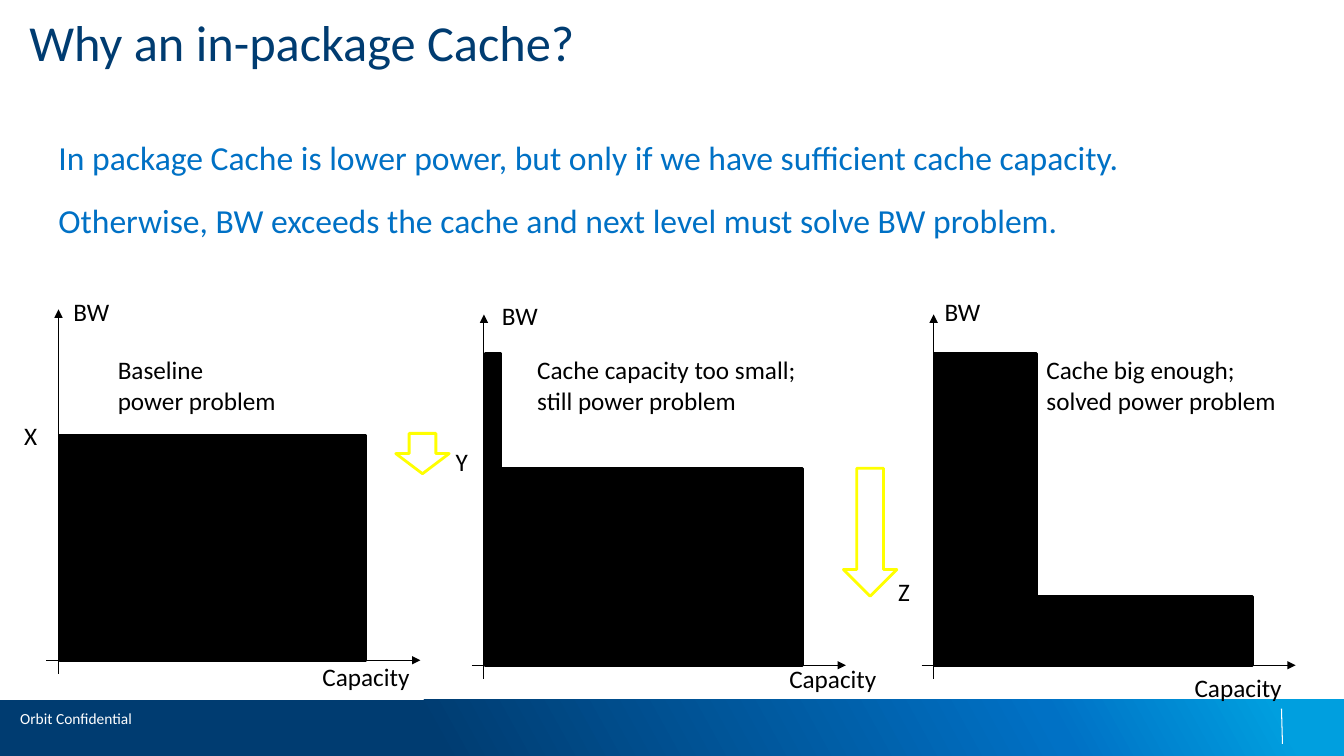
from dataclasses import dataclass

import lxml.etree
import pptx
import pptx.dml.color
import pptx.enum.shapes
import pptx.enum.text
import pptx.oxml
import pptx.oxml.ns
import pptx.util
from pptx.util import Inches

RGBColor = pptx.dml.color.RGBColor
Shape = pptx.enum.shapes.MSO_SHAPE

NAVY = RGBColor(0x00, 0x3C, 0x71)
BLUE = RGBColor(0x00, 0x71, 0xC5)
SKY = RGBColor(0x00, 0x9F, 0xDF)
BLACK = RGBColor(0x00, 0x00, 0x00)
WHITE = RGBColor(0xFF, 0xFF, 0xFF)
YELLOW = RGBColor(0xFF, 0xFF, 0x00)
FONT = "Calibri"
AXIS_HEIGHT, AXIS_WIDTH = 3.62, 3.71
AXIS_OVERHANG = 0.12  # part of the capacity axis left of the BW axis
ORIGIN_DROP = 3.48  # from the top of the BW axis to the origin
BAR_OFFSET = 0.01


@dataclass
class Bar:
    top: float
    width: float


@dataclass
class Label:
    text: str
    left: float
    top: float
    width: float
    height: float = 0.4
    wrap: bool = False


@dataclass
class Chart:
    left: float
    top: float
    bars: list[Bar]
    labels: list[Label]


@dataclass
class DropArrow:
    center_x: float
    center_y: float
    length: float
    thickness: float = 0.53


CHARTS = [
    Chart(0.58, 3.07, [Bar(4.32, 3.04)], [
        Label("BW", 0.63, 2.89, 0.56),
        Label("X", 0.14, 4.12, 0.56, wrap=True),
        Label("Capacity", 3.1, 6.51, 1.07),
        Label("Baseline\npower problem", 1.07, 3.47, 1.86, 0.71),
    ]),
    Chart(4.8, 3.12, [Bar(3.51, 0.16), Bar(4.65, 3.15)], [
        Label("BW", 4.88, 2.93, 0.56),
        Label("Y", 4.42, 4.38, 0.56, wrap=True),
        Label("Capacity", 7.73, 6.53, 1.07),
        Label("Cache capacity too small;\nstill power problem", 5.23, 3.47, 2.97, 0.71),
    ]),
    Chart(9.26, 3.12, [Bar(3.51, 1.01), Bar(5.92, 3.15)], [
        Label("BW", 9.27, 2.89, 0.56),
        Label("Z", 8.81, 5.67, 0.46, wrap=True),
        Label("Capacity", 11.75, 6.62, 1.07),
        Label("Cache big enough;\nsolved power problem", 10.28, 3.47, 2.61, 0.71),
    ]),
]
DROP_ARROWS = [DropArrow(4.19, 4.5, 0.4), DropArrow(8.63, 5.28, 1.27)]


def write_text(shape, text: str, *, size: float = 18, color: RGBColor = BLACK,
               wrap: bool = True, inset: bool = True, gap: float = 0) -> None:
    """Fill a shape with left-aligned paragraphs, one for each line of text."""
    frame = shape.text_frame
    frame.text = text
    frame.word_wrap = wrap
    frame.auto_size = pptx.enum.text.MSO_AUTO_SIZE.NONE
    frame.vertical_anchor = pptx.enum.text.MSO_ANCHOR.TOP
    if not inset:
        frame.margin_left = frame.margin_right = 0
        frame.margin_top = frame.margin_bottom = 0
    for index, paragraph in enumerate(frame.paragraphs):
        paragraph.alignment = pptx.enum.text.PP_ALIGN.LEFT
        paragraph.space_before = pptx.util.Pt(gap if index else 0)
        paragraph.font.size = pptx.util.Pt(size)
        paragraph.font.name = FONT
        paragraph.font.color.rgb = color


def add_text(slide, left: float, top: float, width: float, height: float,
             text: str, **text_format) -> None:
    box = slide.shapes.add_textbox(
        Inches(left), Inches(top), Inches(width), Inches(height))
    write_text(box, text, **text_format)


def add_line(slide, start: tuple[float, float], end: tuple[float, float],
             color: RGBColor = BLACK, arrow: str = "") -> None:
    """Draw a thin line; arrow is "headEnd" (start), "tailEnd" (end) or empty."""
    connector = slide.shapes.add_connector(
        pptx.enum.shapes.MSO_CONNECTOR.STRAIGHT,
        *(Inches(value) for value in (*start, *end)))
    connector.line.color.rgb = color
    connector.line.width = pptx.util.Pt(0.75)
    if arrow:
        line = connector.line._get_or_add_ln()
        lxml.etree.SubElement(line, pptx.oxml.ns.qn(f"a:{arrow}"), type="triangle")
    lxml.etree.SubElement(connector._element.spPr, pptx.oxml.ns.qn("a:effectLst"))


def add_block(slide, kind: Shape, left: float, top: float, width: float, height: float,
              fill: RGBColor | None = None, line: RGBColor | None = None):
    shape = slide.shapes.add_shape(
        kind, Inches(left), Inches(top), Inches(width), Inches(height))
    shape.shadow.inherit = False
    if fill is None:
        shape.fill.background()
    else:
        shape.fill.solid()
        shape.fill.fore_color.rgb = fill
    if line is None:
        shape.line.fill.background()
    else:
        shape.line.color.rgb = line
        shape.line.width = pptx.util.Pt(2)
    return shape


def add_footer(slide) -> None:
    band = add_block(slide, Shape.RECTANGLE, 0, 6.94, 13.33, 0.56, fill=NAVY)
    stops = "".join(
        f'<a:gs pos="{percent * 1000}"><a:srgbClr val="{color}"/></a:gs>'
        for percent, color in ((32, NAVY), (78, BLUE), (95, SKY)))
    gradient = pptx.oxml.parse_xml(
        f'<a:gradFill {pptx.oxml.ns.nsdecls("a")} rotWithShape="1"><a:gsLst>{stops}</a:gsLst>'
        f'<a:lin ang="{331 * 60000}" scaled="0"/></a:gradFill>')
    properties = band._element.spPr
    properties.replace(properties.find(pptx.oxml.ns.qn("a:solidFill")), gradient)
    add_line(slide, (12.71, 7.03), (12.72, 7.38), color=WHITE)
    add_text(slide, 0.2, 7.03, 1.75, 0.19, "Orbit Confidential",
             size=11, color=WHITE, inset=False)


def add_chart_sketch(slide, chart: Chart) -> None:
    origin = chart.top + ORIGIN_DROP
    axis_start = chart.left - AXIS_OVERHANG
    add_line(slide, (chart.left, chart.top), (chart.left, chart.top + AXIS_HEIGHT),
             arrow="headEnd")
    add_line(slide, (axis_start, origin), (axis_start + AXIS_WIDTH, origin),
             arrow="tailEnd")
    for bar in chart.bars:
        add_block(slide, Shape.RECTANGLE, chart.left + BAR_OFFSET, bar.top,
                  bar.width, origin - bar.top, fill=BLACK, line=BLACK)
    for label in chart.labels:
        add_text(slide, label.left, label.top, label.width, label.height,
                 label.text, wrap=label.wrap)


def add_drop_arrow(slide, arrow: DropArrow) -> None:
    shape = add_block(slide, Shape.RIGHT_ARROW, arrow.center_x - arrow.length / 2,
                      arrow.center_y - arrow.thickness / 2,
                      arrow.length, arrow.thickness, line=YELLOW)
    shape.rotation = 90


def main() -> None:
    presentation = pptx.Presentation()
    presentation.slide_width = Inches(13.33)
    presentation.slide_height = Inches(7.5)
    slide = presentation.slides.add_slide(presentation.slide_layouts[5])

    # Footer band
    add_footer(slide)

    # Title and message
    title = slide.shapes.title
    title.left, title.top = Inches(0.29), Inches(0.11)
    title.width, title.height = Inches(11.5), Inches(1.06)
    write_text(title, "Why an in-package Cache?", size=36, color=NAVY, inset=False)
    add_text(slide, 0.58, 1.36, 11.83, 1.36,
             "In package Cache is lower power, but only if we have sufficient cache capacity.\n"
             "Otherwise, BW exceeds the cache and next level must solve BW problem.",
             size=24, color=BLUE, inset=False, gap=16)

    # Bandwidth against capacity
    for chart in CHARTS:
        add_chart_sketch(slide, chart)
    for arrow in DROP_ARROWS:
        add_drop_arrow(slide, arrow)

    presentation.save("out.pptx")


if __name__ == "__main__":
    main()
